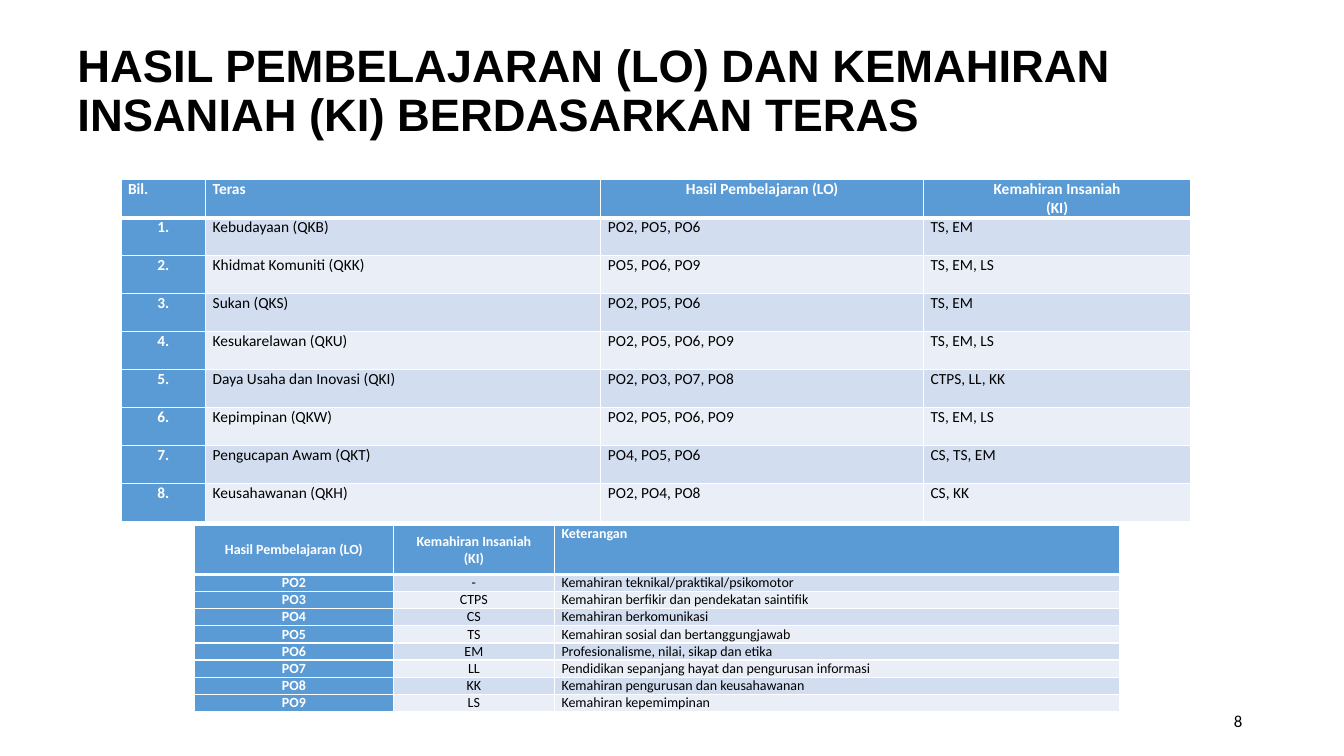
from pptx import Presentation
from pptx.dml.color import RGBColor as Rgb
from pptx.enum.text import MSO_ANCHOR as Anchor, PP_ALIGN as Align
from pptx.oxml import parse_xml
from pptx.oxml.ns import nsdecls
from pptx.util import Inches, Pt

COLORS = {
    "head": "5B9BD5",
    "odd": "D2DEEF",
    "even": "EAEFF7",
    "white": "FFFFFF",
    "black": "000000",
}

CORES = [
    ["Bil.", "Teras", "Hasil Pembelajaran (LO)", "Kemahiran Insaniah\n(KI)"],
    ["1.", "Kebudayaan (QKB)", "PO2, PO5, PO6", "TS, EM"],
    ["2.", "Khidmat Komuniti (QKK)", "PO5, PO6, PO9", "TS, EM, LS"],
    ["3.", "Sukan (QKS)", "PO2, PO5, PO6", "TS, EM"],
    ["4.", "Kesukarelawan (QKU)", "PO2, PO5, PO6, PO9", "TS, EM, LS"],
    ["5.", "Daya Usaha dan Inovasi (QKI)", "PO2, PO3, PO7, PO8", "CTPS, LL, KK"],
    ["6.", "Kepimpinan (QKW)", "PO2, PO5, PO6, PO9", "TS, EM, LS"],
    ["7.", "Pengucapan Awam (QKT)", "PO4, PO5, PO6", "CS, TS, EM"],
    ["8.", "Keusahawanan (QKH)", "PO2, PO4, PO8", "CS, KK"],
]

SKILLS = [
    ["Hasil Pembelajaran (LO)", "Kemahiran Insaniah\n(KI)", "Keterangan"],
    ["PO2", "-", "Kemahiran teknikal/praktikal/psikomotor"],
    ["PO3", "CTPS", "Kemahiran berfikir dan pendekatan saintifik"],
    ["PO4", "CS", "Kemahiran berkomunikasi"],
    ["PO5", "TS", "Kemahiran sosial dan bertanggungjawab"],
    ["PO6", "EM", "Profesionalisme, nilai, sikap dan etika"],
    ["PO7", "LL", "Pendidikan sepanjang hayat dan pengurusan informasi"],
    ["PO8", "KK", "Kemahiran pengurusan dan keusahawanan"],
    ["PO9", "LS", "Kemahiran kepemimpinan"],
]


class Board:
    def __init__(self, slide, font="Calibri"):
        self.slide = slide
        self.font = font

    def style(self, frame, size, color, bold, align, font=None):
        for para in frame.paragraphs:
            para.alignment = align
            para.font.name = font or self.font
            para.font.size = Pt(size)
            para.font.bold = bold
            para.font.color.rgb = Rgb.from_string(COLORS[color])

    def text(self, words, box, size, bold=False, align=Align.LEFT, font=None, space=1.0):
        frame = self.slide.shapes.add_textbox(*map(Inches, box)).text_frame
        frame.word_wrap = True
        frame.margin_top = frame.margin_bottom = 0
        frame.vertical_anchor = Anchor.MIDDLE
        frame.text = words
        frame.paragraphs[0].line_spacing = space
        self.style(frame, size, "black", bold, align, font)

    def edge(self, cell, sides):
        props = cell._tc.get_or_add_tcPr()
        for spot, (side, width) in enumerate(sides.items()):
            props.insert(spot, parse_xml(
                f'<a:ln{side} {nsdecls("a")} w="{Pt(width)}"><a:solidFill>'
                f'<a:srgbClr val="{COLORS["white"]}"/></a:solidFill></a:ln{side}>'))

    def cell(self, cell, words, fill, size, color, bold, align, anchor):
        cell.margin_left = cell.margin_right = Inches(0.07)
        cell.margin_top = cell.margin_bottom = 0
        cell.vertical_anchor = anchor
        cell.fill.solid()
        cell.fill.fore_color.rgb = Rgb.from_string(COLORS[fill])
        cell.text = words
        self.style(cell.text_frame, size, color, bold, align)

    def table(self, rows, left, top, widths, heads, step, size, mid_head, mid_body):
        high = heads + step * (len(rows) - 1)
        box = map(Inches, (left, top, sum(widths), high))
        grid = self.slide.shapes.add_table(len(rows), len(widths), *box).table
        grid.horz_banding = False
        for col, width in zip(grid.columns, widths):
            col.width = Inches(width)
        for r, row in enumerate(rows):
            grid.rows[r].height = Inches(step if r else heads)
            mids = mid_body if r else mid_head
            for c, words in enumerate(row):
                key = r == 0 or c == 0
                fill = "head" if key else ("odd" if r % 2 else "even")
                align = Align.CENTER if c in mids else Align.LEFT
                mid = r == 0 and c in mids and 0 in mids
                self.cell(grid.cell(r, c), words, fill, size,
                          "white" if key else "black", key, align,
                          Anchor.MIDDLE if mid else Anchor.TOP)
                self.edge(grid.cell(r, c), {
                    "L": 1, "R": 1, "T": 3 if r == 1 else 1, "B": 1 if r else 3})


def main():
    deck = Presentation()
    deck.slide_width, deck.slide_height = Inches(13.33), Inches(7.5)
    board = Board(deck.slides.add_slide(deck.slide_layouts[6]))
    board.text("HASIL PEMBELAJARAN (LO) DAN KEMAHIRAN INSANIAH (KI) BERDASARKAN TERAS",
               (0.67, 0.43, 12, 0.97), 32.4, True, font="Arial", space=0.9)
    board.text("8", (9.42, 6.95, 3, 0.4), 12, align=Align.RIGHT)
    board.table(CORES, 1.2, 1.78, [0.84, 3.92, 3.2, 2.65], 0.38, 0.377, 11, {2, 3}, {0})
    board.table(SKILLS, 1.93, 5.21, [1.97, 1.6, 5.6], 0.49, 0.17, 10, {0, 1}, {0, 1})
    deck.save("out.pptx")


if __name__ == "__main__":
    main()
